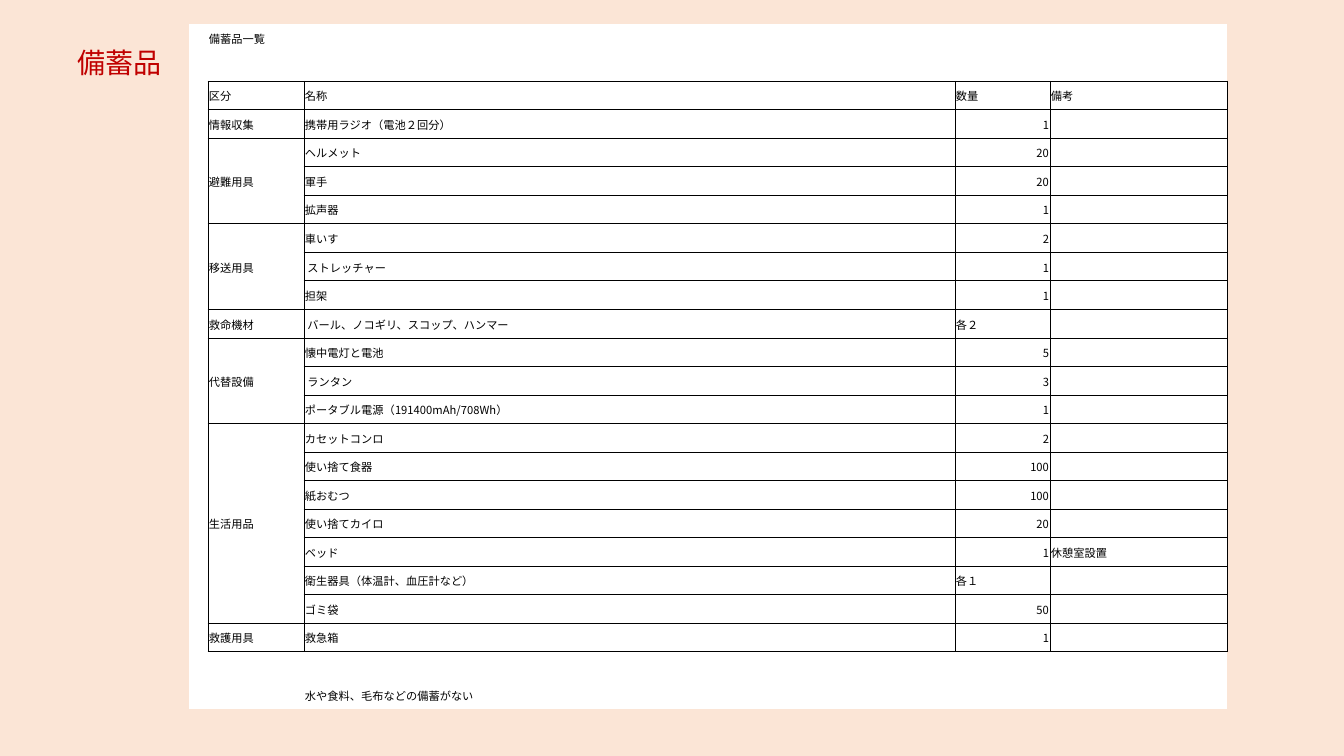
from lxml import etree
from pptx import Presentation
from pptx.dml.color import RGBColor
from pptx.enum.lang import MSO_LANGUAGE_ID
from pptx.enum.text import MSO_ANCHOR, MSO_AUTO_SIZE, PP_ALIGN
from pptx.oxml.ns import qn
from pptx.util import Pt

LEFT, RIGHT = PP_ALIGN.LEFT, PP_ALIGN.RIGHT
TOP, MIDDLE = MSO_ANCHOR.TOP, MSO_ANCHOR.MIDDLE
GROW = MSO_AUTO_SIZE.SHAPE_TO_FIT_TEXT
JAPANESE = MSO_LANGUAGE_ID.JAPANESE

SLIDE_W, SLIDE_H = 1344, 756
SCALE = 12192000 / SLIDE_W
FONT = "Noto Sans CJK JP"
COLORS = {"background": "FBE5D6", "title": "C00000", "text": "000000",
          "border": "000000", "cell": "FFFFFF"}

TABLE_X, TABLE_Y, TABLE_H = 189, 24, 714
COL_WIDTHS = [19, 96, 651, 95, 177]
ROW_COUNT = 25
HEADER_ROW = 2
HEADERS = ["区分", "名称", "数量", "備考"]
STOCK = [
    ("情報収集", [("携帯用ラジオ（電池２回分）", "1")]),
    ("避難用具", [("ヘルメット", "20"), ("軍手", "20"), ("拡声器", "1")]),
    ("移送用具", [("車いす", "2"), (" ストレッチャー", "1"), ("担架", "1")]),
    ("救命機材", [(" バール、ノコギリ、スコップ、ハンマー", "各２")]),
    ("代替設備", [("懐中電灯と電池", "5"), (" ランタン", "3"),
              ("ポータブル電源（191400mAh/708Wh）", "1")]),
    ("生活用品", [("カセットコンロ", "2"), ("使い捨て食器", "100"),
              ("紙おむつ", "100"), ("使い捨てカイロ", "20"),
              ("ベッド", "1", "休憩室設置"),
              ("衛生器具（体温計、血圧計など）", "各１"), ("ゴミ袋", "50")]),
    ("救護用具", [("救急箱", "1")]),
]
LAST_ROW = HEADER_ROW + sum(len(items) for _, items in STOCK)
SIDES = {"a:lnL": (0, -1), "a:lnR": (0, 1), "a:lnT": (-1, 0), "a:lnB": (1, 0)}


def px(n):
    return round(n * SCALE)


def rgb(name):
    return RGBColor.from_string(COLORS[name])


def set_attrs(target, values):
    for name, value in values.items():
        setattr(target, name, value)


def write(p, text, size, color, align=LEFT):
    p.alignment = align
    r = p.add_run()
    r.text = text
    set_attrs(r.font, {"size": Pt(size), "name": FONT, "language_id": JAPANESE})
    r.font.color.rgb = rgb(color)
    etree.SubElement(r.font._element, qn("a:ea"), typeface=FONT)


def add_title(s, text):
    sp = s.shapes.title
    set_attrs(sp, {"left": px(67), "top": px(40), "width": px(154), "height": px(44)})
    tf = sp.text_frame
    set_attrs(tf, {"word_wrap": True, "auto_size": GROW, "vertical_anchor": TOP})
    write(tf.paragraphs[0], text, 20, "title")


def in_grid(row, col):
    return HEADER_ROW <= row <= LAST_ROW and 1 <= col < len(COL_WIDTHS)


def set_borders(cell, row, col):
    tc_pr = cell._tc.get_or_add_tcPr()
    for tag, (dr, dc) in SIDES.items():
        ln = etree.SubElement(tc_pr, qn(tag), w=str(Pt(0.5)))
        if in_grid(row, col) or in_grid(row + dr, col + dc):
            fill = etree.SubElement(ln, qn("a:solidFill"))
            etree.SubElement(fill, qn("a:srgbClr"), val=COLORS["border"])
        else:
            etree.SubElement(ln, qn("a:noFill"))


def format_cell(cell, row, col, text):
    set_borders(cell, row, col)
    if row < ROW_COUNT - 1:
        cell.fill.solid()
        cell.fill.fore_color.rgb = rgb("cell")
    else:
        cell.fill.background()
    set_attrs(cell, {"margin_left": px(1), "margin_right": px(1), "margin_top": px(1),
                     "margin_bottom": 0, "vertical_anchor": MIDDLE})
    p = cell.text_frame.paragraphs[0]
    if text:
        write(p, text, 8, "text", RIGHT if text.isdecimal() else LEFT)
    else:
        etree.SubElement(p._p, qn("a:endParaRPr"), sz="800")


def stock_contents():
    texts = {(0, 1): "備蓄品一覧", (ROW_COUNT - 2, 2): "水や食料、毛布などの備蓄がない"}
    merges = [(0, 1, 0, 2)]
    for col, header in enumerate(HEADERS, 1):
        texts[HEADER_ROW, col] = header
    row = HEADER_ROW + 1
    for category, items in STOCK:
        texts[row, 1] = category
        if len(items) > 1:
            merges.append((row, 1, row + len(items) - 1, 1))
        for item in items:
            for col, text in enumerate(item, 2):
                texts[row, col] = text
            row += 1
    return texts, merges


def add_stock_table(s):
    texts, merges = stock_contents()
    table = s.shapes.add_table(ROW_COUNT, len(COL_WIDTHS), px(TABLE_X), px(TABLE_Y),
                               px(sum(COL_WIDTHS)), px(TABLE_H)).table
    set_attrs(table, {"first_row": False, "horz_banding": False})
    for column, width in zip(table.columns, COL_WIDTHS):
        column.width = px(width)
    for r, row in enumerate(table.rows):
        row.height = px(TABLE_H / ROW_COUNT)
        for c, cell in enumerate(row.cells):
            format_cell(cell, r, c, texts.get((r, c)))
    for top, left, bottom, right in merges:
        table.cell(top, left).merge(table.cell(bottom, right))


def main():
    prs = Presentation()
    set_attrs(prs, {"slide_width": px(SLIDE_W), "slide_height": px(SLIDE_H)})
    s = prs.slides.add_slide(prs.slide_layouts[5])
    s.background.fill.solid()
    s.background.fill.fore_color.rgb = rgb("background")
    add_title(s, "備蓄品")
    add_stock_table(s)
    prs.save("out.pptx")


if __name__ == "__main__":
    main()
